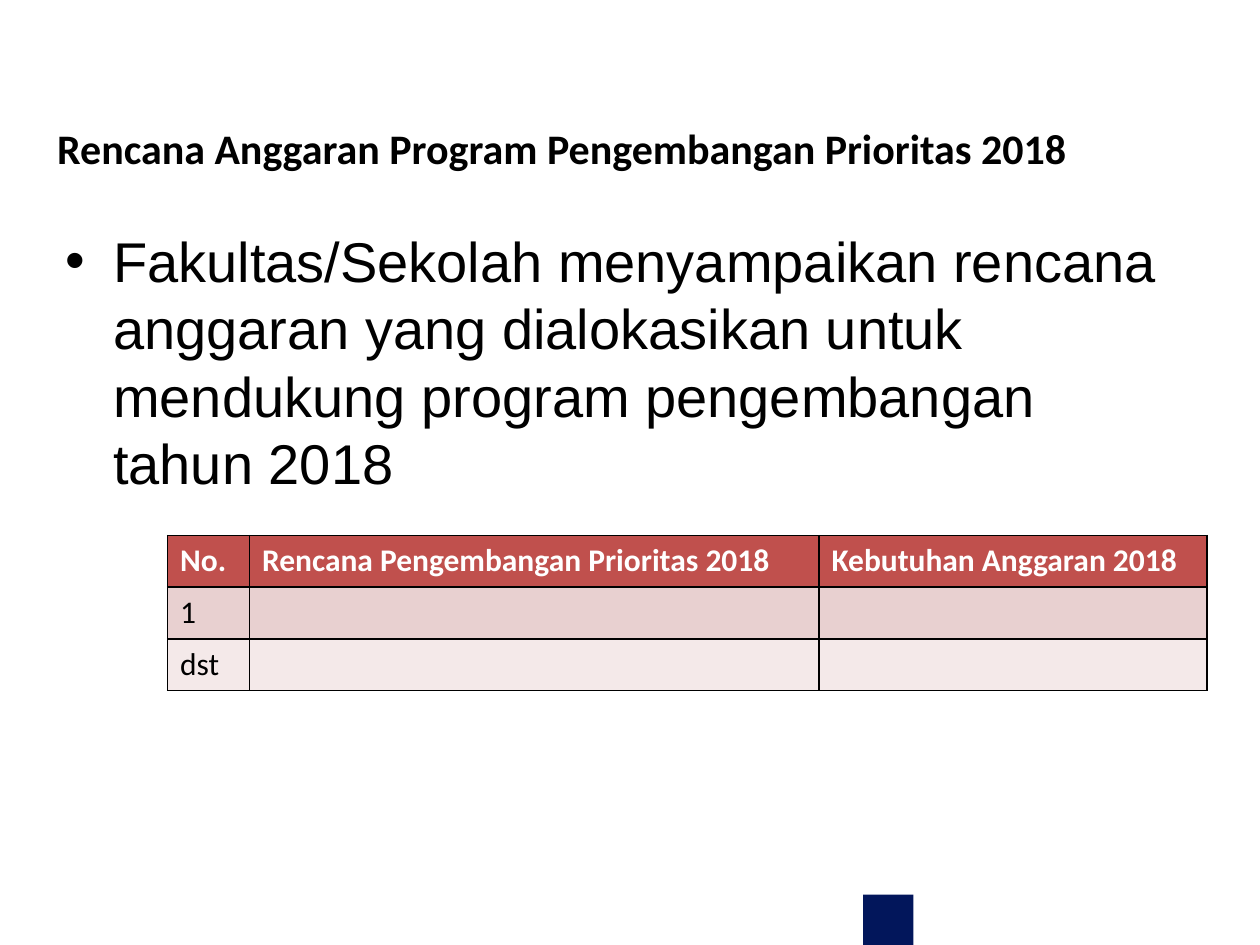
from pptx import Presentation
from pptx.dml.color import RGBColor
from pptx.enum.shapes import MSO_SHAPE
from pptx.enum.text import PP_ALIGN
from pptx.oxml import parse_xml
from pptx.oxml.ns import nsdecls
from pptx.util import Inches, Pt

BLACK, WHITE, NAVY = "000000", "FFFFFF", "02165B"
HEADER_FILL = "C0504D"
BAND_FILLS = ["E8D0D0", "F4E9E9"]
COLUMN_WIDTHS = [0.65, 4.52, 3.08]
ROW_HEIGHT = 0.41
ROWS = [
    ["No.", "Rencana Pengembangan Prioritas 2018", "Kebutuhan Anggaran 2018"],
    ["1", "", ""],
    ["dst", "", ""],
]


def color(value):
    return RGBColor.from_string(value)


def format_font(font, name, size, value, bold=False):
    font.name = name
    font.size = Pt(size)
    font.bold = bold
    font.color.rgb = color(value)


def add_text(slide, text, left, top, width, height):
    """Add a wrapping text box and return its only paragraph."""
    box = slide.shapes.add_textbox(
        Inches(left), Inches(top), Inches(width), Inches(height))
    box.text_frame.word_wrap = True
    box.text_frame.text = text
    return box.text_frame.paragraphs[0]


def add_bullet(paragraph, indent):
    properties = paragraph._p.get_or_add_pPr()
    properties.set("marL", str(Inches(indent)))
    properties.set("indent", str(-Inches(indent)))
    properties.append(parse_xml(f'<a:buFont {nsdecls("a")} typeface="Arial"/>'))
    properties.append(parse_xml(f'<a:buChar {nsdecls("a")} char="•"/>'))


def add_square(slide, left, top, side, fill):
    shape = slide.shapes.add_shape(
        MSO_SHAPE.RECTANGLE, Inches(left), Inches(top), Inches(side), Inches(side))
    shape.shadow.inherit = False
    shape.fill.solid()
    shape.fill.fore_color.rgb = color(fill)
    shape.line.fill.background()


def add_borders(cell, value, width):
    properties = cell._tc.get_or_add_tcPr()
    for position, side in enumerate(["lnL", "lnR", "lnT", "lnB"]):
        properties.insert(position, parse_xml(
            f'<a:{side} {nsdecls("a")} w="{Pt(width)}"><a:solidFill>'
            f'<a:srgbClr val="{value}"/></a:solidFill></a:{side}>'))


def add_budget_table(slide, left, top):
    table = slide.shapes.add_table(
        len(ROWS), len(COLUMN_WIDTHS), Inches(left), Inches(top),
        Inches(sum(COLUMN_WIDTHS)), Inches(ROW_HEIGHT * len(ROWS))).table
    for column, width in zip(table.columns, COLUMN_WIDTHS):
        column.width = Inches(width)
    for row_index, texts in enumerate(ROWS):
        is_header = row_index == 0
        fill = HEADER_FILL if is_header else BAND_FILLS[(row_index - 1) % 2]
        table.rows[row_index].height = Inches(ROW_HEIGHT)
        for cell, text in zip(table.rows[row_index].cells, texts):
            cell.text = text
            cell.fill.solid()
            cell.fill.fore_color.rgb = color(fill)
            add_borders(cell, BLACK, 1)
            format_font(cell.text_frame.paragraphs[0].font, "Calibri", 18,
                        WHITE if is_header else BLACK, is_header)


def main():
    presentation = Presentation()
    presentation.slide_width = Inches(10)
    presentation.slide_height = Inches(7.5)
    slide = presentation.slides.add_slide(presentation.slide_layouts[6])

    add_square(slide, 6.85, 7.1, 0.4, NAVY)

    title = add_text(slide, "Rencana Anggaran Program Pengembangan Prioritas 2018",
                     0.17, 0.92, 8.58, 0.5)
    title.alignment = PP_ALIGN.CENTER
    format_font(title.font, "Calibri", 24, BLACK, True)

    body = add_text(
        slide, "Fakultas/Sekolah menyampaikan rencana anggaran yang dialokasikan "
        "untuk mendukung program pengembangan tahun 2018", 0.42, 1.75, 9, 4.53)
    add_bullet(body, 0.38)
    format_font(body.font, "Arial", 32, BLACK)

    add_budget_table(slide, 1.33, 4.25)
    presentation.save("out.pptx")


if __name__ == "__main__":
    main()
